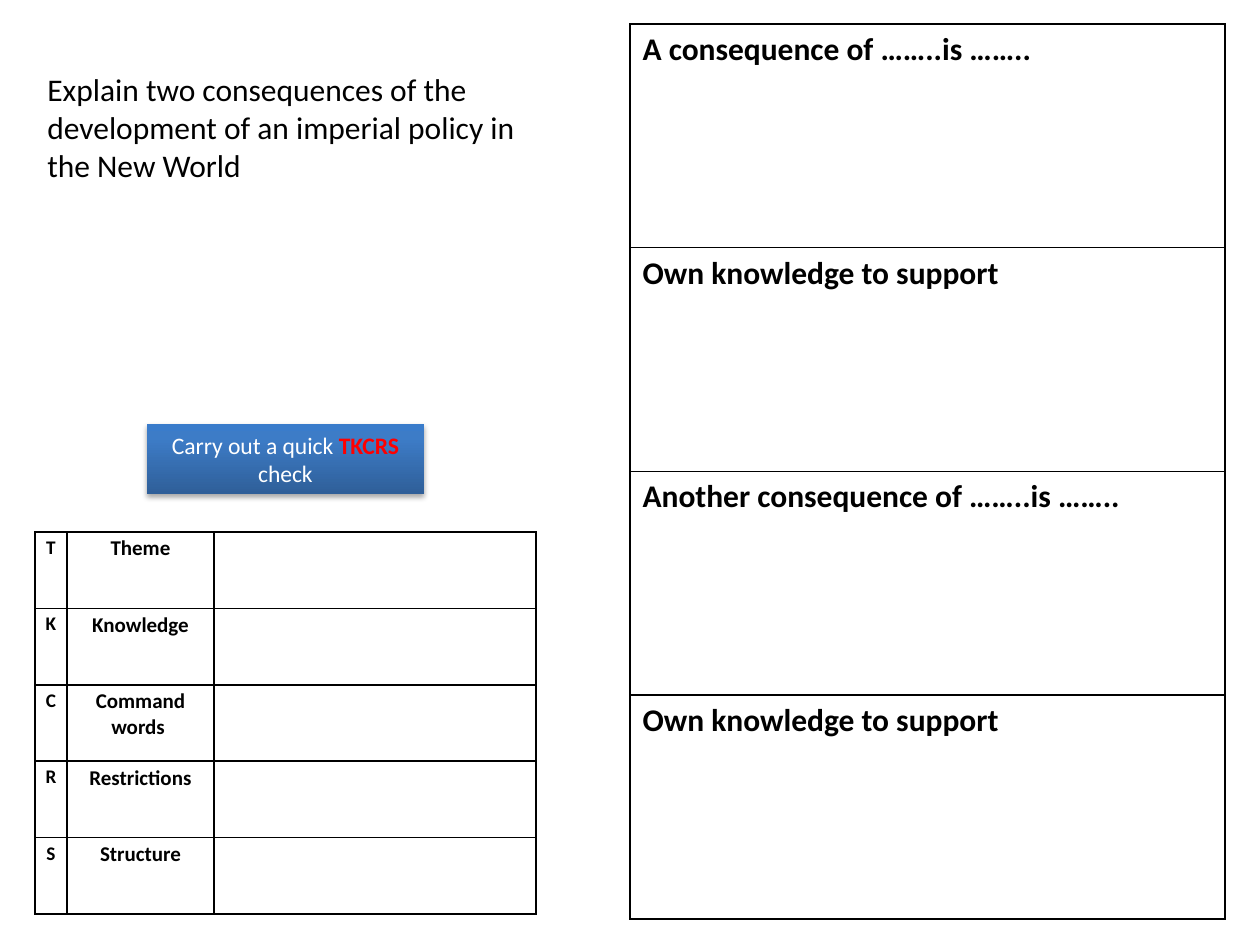
from dataclasses import dataclass

from pptx import Presentation
from pptx.dml.color import RGBColor
from pptx.enum.shapes import MSO_SHAPE as Shape
from pptx.enum.text import MSO_ANCHOR as Anchor, PP_ALIGN as Align
from pptx.oxml import parse_xml
from pptx.oxml.ns import nsdecls, qn
from pptx.util import Pt

EMU_PER_PX = 914400 / 126


def px(length):
    return round(length * EMU_PER_PX)


@dataclass(frozen=True)
class Theme:
    font: str = "Calibri"
    ink: str = "000000"
    light: str = "FFFFFF"
    accent: str = "FF0000"
    button: tuple = ((0, "2F5F99"), (80, "3D7CC7"), (100, "3A7CCB"))
    body: float = 18
    label: float = 12
    letter: float = 11
    prompt: float = 13.5
    border: float = 1


class Worksheet:
    def __init__(self, theme, width, height):
        self.theme = theme
        self.deck = Presentation()
        self.deck.slide_width, self.deck.slide_height = px(width), px(height)
        self.page = self.deck.slides.add_slide(self.deck.slide_layouts[6])

    def span(self, para, text, size, color=None, bold=False):
        run = para.add_run()
        run.text = text
        run.font.name = self.theme.font
        run.font.size = Pt(size)
        run.font.bold = bold
        run.font.color.rgb = RGBColor.from_string(color or self.theme.ink)

    def question(self, area, text):
        frame = self.page.shapes.add_textbox(*map(px, area)).text_frame
        frame.word_wrap = True
        frame.vertical_anchor = Anchor.BOTTOM
        self.span(frame.paragraphs[0], text, self.theme.body)

    def button(self, area, spans):
        box = self.page.shapes.add_shape(Shape.RECTANGLE, *map(px, area))
        box.shadow.inherit = False
        box.line.fill.background()
        # Three-stop gradient running upwards, with a soft shadow below
        stops = "".join(
            f'<a:gs pos="{place * 1000}"><a:srgbClr val="{color}"/></a:gs>'
            for place, color in self.theme.button)
        properties = box._element.spPr
        properties.find(qn("a:ln")).addprevious(parse_xml(
            f'<a:gradFill {nsdecls("a")} rotWithShape="1"><a:gsLst>{stops}</a:gsLst>'
            '<a:lin ang="16200000" scaled="0"/></a:gradFill>'))
        properties.find(qn("a:effectLst")).append(parse_xml(
            f'<a:outerShdw {nsdecls("a")} blurRad="40000" dist="23000" dir="5400000"'
            f' rotWithShape="0"><a:srgbClr val="{self.theme.ink}">'
            '<a:alpha val="35000"/></a:srgbClr></a:outerShdw>'))
        frame = box.text_frame
        frame.word_wrap = True
        frame.vertical_anchor = Anchor.MIDDLE
        para = frame.paragraphs[0]
        para.alignment = Align.CENTER
        for text, color, bold in spans:
            self.span(para, text, self.theme.prompt, color, bold)

    def table(self, area, widths, rows, sizes, align=Align.LEFT, insets=None):
        grid = self.page.shapes.add_table(len(rows), len(widths), *map(px, area)).table
        grid.first_row = grid.horz_banding = False
        for column, width in zip(grid.columns, widths):
            column.width = px(width)
        for row, texts in zip(grid.rows, rows):
            row.height = px(area[3] / len(rows))
            for cell, text, size in zip(row.cells, texts, sizes):
                self.outline(cell)
                if insets:
                    cell.margin_left = cell.margin_right = px(insets[0])
                    cell.margin_top = cell.margin_bottom = px(insets[1])
                self.fill_cell(cell.text_frame, text, size, align)

    def fill_cell(self, frame, text, size, align):
        for index, line in enumerate(text.split("\n") if text else []):
            para = frame.add_paragraph() if index else frame.paragraphs[0]
            para.alignment = align
            self.span(para, line, size, bold=True)

    def outline(self, cell):
        cell.fill.background()
        properties = cell._tc.get_or_add_tcPr()
        for index, side in enumerate("LRTB"):
            properties.insert(index, parse_xml(
                f'<a:ln{side} {nsdecls("a")} w="{Pt(self.theme.border)}"><a:solidFill>'
                f'<a:srgbClr val="{self.theme.ink}"/></a:solidFill></a:ln{side}>'))


def main():
    theme = Theme()
    sheet = Worksheet(theme, 1260, 945)

    # Exam question
    sheet.question((35, 25, 507, 165),
                   "Explain two consequences of the development of an imperial "
                   "policy in the New World")

    # Answer frame
    support = "Own knowledge to support"
    answers = ["A consequence of ……..is ……..", support,
               "Another consequence of ……..is ……..", support]
    sheet.table((630, 24, 595, 895), [595], [[text] for text in answers], [theme.body])

    # Prompt above the checklist
    sheet.button((147, 424, 277, 70), [
        ("Carry out a quick ", theme.light, False),
        ("TKCRS", theme.accent, True),
        (" check", theme.light, False)])

    # TKCRS checklist: initial, meaning, space for notes
    checks = ["Theme", "Knowledge", "Command\nwords ", "Restrictions", "Structure"]
    sheet.table((35, 532, 501, 382), [32, 147, 322],
                [(letter, check, "") for letter, check in zip("TKCRS", checks)],
                [theme.letter, theme.label, theme.label], Align.CENTER, (8, 4))

    sheet.deck.save("out.pptx")


if __name__ == "__main__":
    main()
